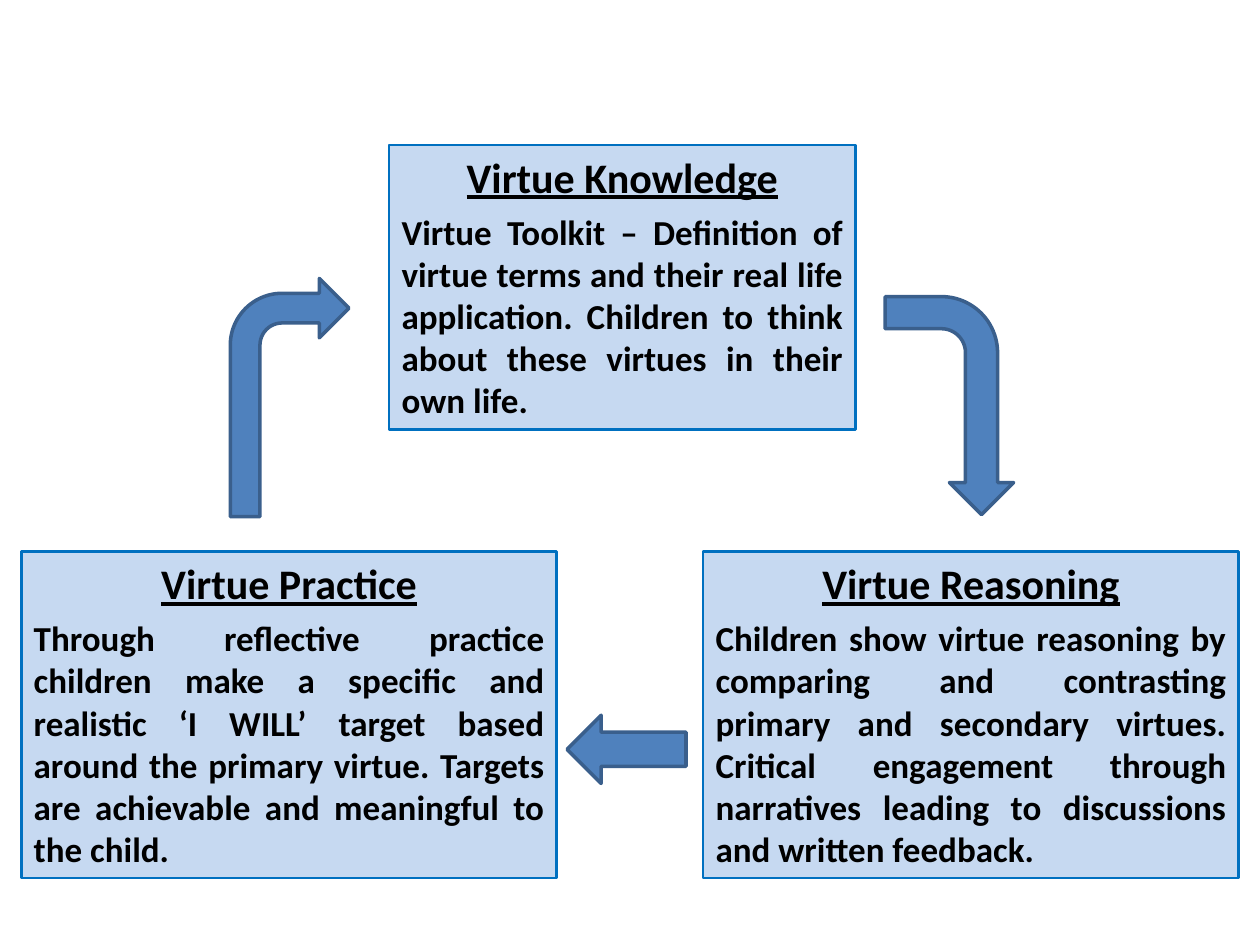
"""Build a slide showing the cycle of virtue knowledge, reasoning and practice."""
from pptx import Presentation
from pptx.dml.color import RGBColor
from pptx.enum.shapes import MSO_SHAPE as Shape
from pptx.enum.text import MSO_ANCHOR as Anchor, MSO_AUTO_SIZE as AutoSize, PP_ALIGN as Align
from pptx.util import Pt


def color(hex_string):
    return RGBColor.from_string(hex_string)


def write(paragraph, text, size=20, align=Align.JUSTIFY, underline=False, before=0):
    paragraph.alignment = align
    paragraph.space_before = Pt(before)
    run = paragraph.add_run()
    run.text = text
    font = run.font
    font.name, font.size, font.bold, font.underline = "Calibri", Pt(size), True, underline
    font.color.rgb = color("000000")


class CycleSlide:
    def __init__(self, slide):
        self.slide = slide
        self.box_fill, self.box_line = "C6D9F1", "0070C0"
        self.arrow_fill, self.arrow_line = "4F81BD", "3A5F8C"

    def outline(self, kind, place, fill, line, width):
        shape = self.slide.shapes.add_shape(kind, *map(Pt, place))
        shape.shadow.inherit = False
        shape.fill.solid()
        shape.fill.fore_color.rgb = color(fill)
        shape.line.color.rgb = color(line)
        shape.line.width = Pt(width)
        return shape

    def stage(self, heading, description, place):
        box = self.outline(Shape.RECTANGLE, place, self.box_fill, self.box_line, 1.5)
        frame = box.text_frame
        frame.word_wrap = True
        frame.auto_size = AutoSize.SHAPE_TO_FIT_TEXT
        frame.vertical_anchor = Anchor.TOP
        write(frame.paragraphs[0], heading, size=24, align=Align.CENTER, underline=True)
        write(frame.add_paragraph(), description, before=4.9)

    def arrow(self, kind, place, rotation=0):
        step = self.outline(kind, place, self.arrow_fill, self.arrow_line, 2)
        step.rotation = rotation


def main():
    deck = Presentation()
    deck.slide_width, deck.slide_height = Pt(720), Pt(540)
    cycle = CycleSlide(deck.slides.add_slide(deck.slide_layouts[6]))

    lower_top, lower_width, lower_height, margin = 315.3, 306, 186.5, 12.2
    cycle.stage(
        "Virtue Knowledge",
        "Virtue Toolkit – Definition of virtue terms and their real life application. "
        "Children to think about these virtues in their own life.",
        (222.4, 82.8, 266.4, 162.7))
    cycle.stage(
        "Virtue Reasoning",
        "Children show virtue reasoning by comparing and contrasting primary and secondary "
        "virtues. Critical engagement through narratives leading to discussions and written "
        "feedback.",
        (720 - margin - lower_width, lower_top, lower_width, lower_height))
    cycle.stage(
        "Virtue Practice",
        "Through reflective practice children make a specific and realistic ‘I WILL’ target "
        "based around the primary virtue. Targets are achievable and meaningful to the child.",
        (margin, lower_top, lower_width, lower_height))

    cycle.arrow(Shape.BENT_ARROW, (480.2, 195.1, 124.6, 73.4), rotation=90)
    cycle.arrow(Shape.BENT_ARROW, (131.6, 159.1, 67.8, 136.1))
    cycle.arrow(Shape.LEFT_ARROW, (324, 408.7, 68, 39))
    deck.save("out.pptx")


if __name__ == "__main__":
    main()
